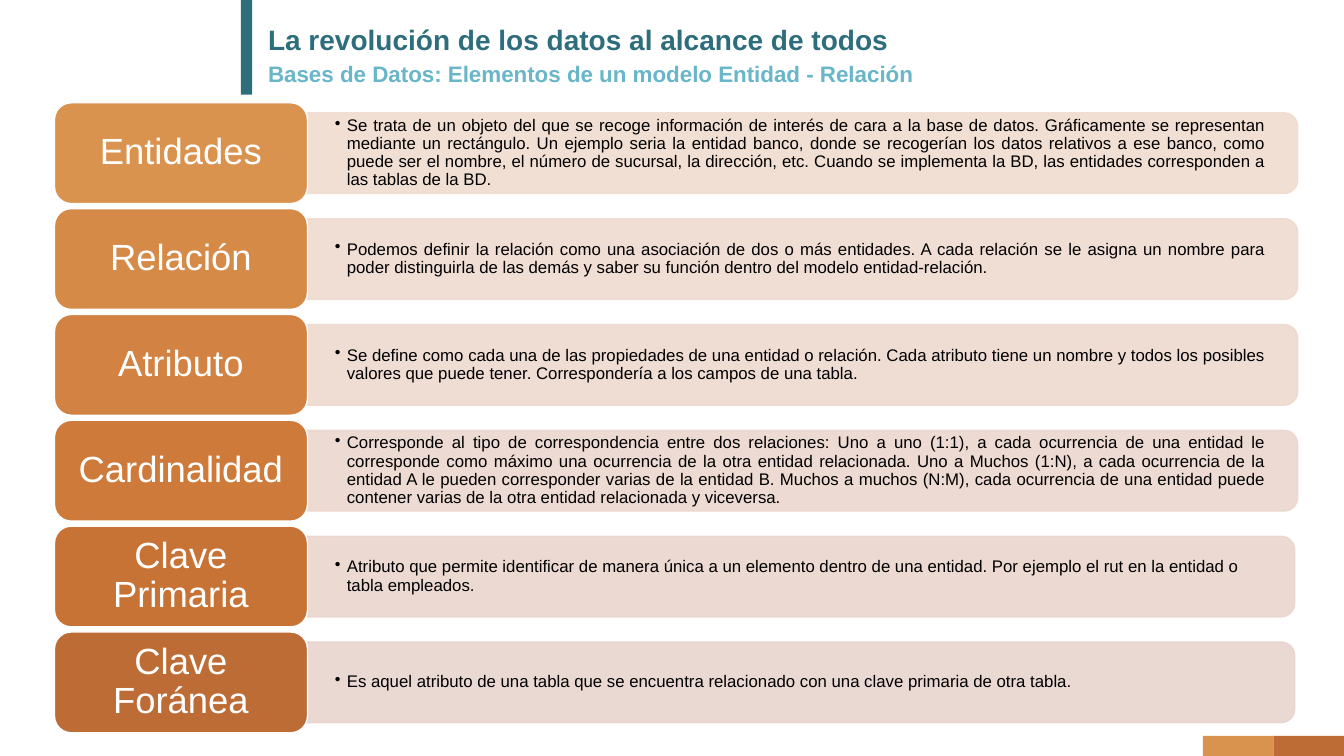
from lxml.etree import SubElement as Sub
from pptx import Presentation
from pptx.dml.color import RGBColor
from pptx.enum.shapes import MSO_SHAPE as Shape
from pptx.enum.text import MSO_ANCHOR as Anchor, PP_ALIGN as Align
from pptx.oxml.ns import qn
from pptx.util import Inches, Pt

WIDE, HIGH = 13.33, 7.5
TOP, STEP = 1.02, 1.05
LEFT, SPLIT = 0.54, 3.05

ROWS = [
    ("Entidades", "DA924F", "F1DCD0", 9.82, Align.JUSTIFY,
     "Se trata de un objeto del que se recoge información de interés de cara a la base de datos. "
     "Gráficamente se representan mediante un rectángulo. Un ejemplo seria la entidad banco, donde se "
     "recogerían los datos relativos a ese banco, como puede ser el nombre, el número de sucursal, la "
     "dirección, etc. Cuando se implementa la BD, las entidades corresponden a las tablas de la BD."),
    ("Relación", "D68A48", "EFDACF", 9.82, Align.JUSTIFY,
     "Podemos definir la relación como una asociación de dos o más entidades. A cada relación se le "
     "asigna un nombre para poder distinguirla de las demás y saber su función dentro del modelo "
     "entidad-relación."),
    ("Atributo", "D28242", "EED9CF", 9.82, Align.JUSTIFY,
     "Se define como cada una de las propiedades de una entidad o relación. Cada atributo tiene un "
     "nombre y todos los posibles valores que puede tener. Correspondería a los campos de una tabla."),
    ("Cardinalidad", "CD7A3B", "ECD7CE", 9.82, Align.JUSTIFY,
     "Corresponde al tipo de correspondencia entre dos relaciones: Uno a uno (1:1), a cada ocurrencia "
     "de una entidad le corresponde como máximo una ocurrencia de la otra entidad relacionada. Uno a "
     "Muchos (1:N), a cada ocurrencia de la entidad A le pueden corresponder varias de la entidad B. "
     "Muchos a muchos (N:M), cada ocurrencia de una entidad puede contener varias de la otra entidad "
     "relacionada y viceversa."),
    ("Clave Primaria", "C87336", "EAD6CE", 9.79, Align.LEFT,
     "Atributo que permite identificar de manera única a un elemento dentro de una entidad. Por "
     "ejemplo el rut en la entidad o tabla empleados."),
    ("Clave Foránea", "BD6C36", "E8D4CE", 9.79, Align.LEFT,
     "Es aquel atributo de una tabla que se encuentra relacionado con una clave primaria de otra tabla."),
]


def tint(target, code):
    target.rgb = RGBColor.from_string(code)


def block(slide, kind, box, fill, line=None):
    shape = slide.shapes.add_shape(kind, *map(Inches, box))
    shape.shadow.inherit = False
    shape.fill.solid()
    tint(shape.fill.fore_color, fill)
    if line:
        tint(shape.line.color, line)
        shape.line.width = Pt(1)
    else:
        shape.line.fill.background()
    return shape


def write(slide, box, text, size, color, align=Align.LEFT, anchor=Anchor.MIDDLE,
          pad=(0.1, 0.05), bold=False, bullet=False):
    frame = slide.shapes.add_textbox(*map(Inches, box)).text_frame
    frame.word_wrap = True
    frame.vertical_anchor = anchor
    frame.margin_left = frame.margin_right = Inches(pad[0])
    frame.margin_top = frame.margin_bottom = Inches(pad[1])
    para = frame.paragraphs[0]
    para.text = text
    para.alignment = align
    para.line_spacing = 0.9
    if bullet:
        props = para._p.get_or_add_pPr()
        props.set("marL", str(Inches(0.12)))
        props.set("indent", str(Inches(-0.12)))
        Sub(props, qn("a:buChar"), char="•")
    font = para.runs[0].font
    font.name, font.size, font.bold = "Arial", Pt(size), bold
    tint(font.color, color)


def header(slide, x, y, w):
    block(slide, Shape.RECTANGLE, (x, y, 0.11, 0.94), "2D6D7C")
    write(slide, (x + 0.17, y + 0.21, w, 0.4), "La revolución de los datos al alcance de todos",
          20, "2D6D7C", anchor=Anchor.TOP, bold=True)
    write(slide, (x + 0.17, y + 0.58, w, 0.4),
          "Bases de Datos: Elementos de un modelo Entidad - Relación",
          16, "69B6C9", anchor=Anchor.TOP, bold=True)


def corner(slide, w, h):
    for col, fill in enumerate(("BD6C36", "DA924F"), 1):
        block(slide, Shape.RECTANGLE, (WIDE - col * w, HIGH - h, w, h), fill)


def panel(slide, x, y, w, h, fill, text, align):
    # A tall shape turned a quarter, so its round corners face right
    turned = (x + (w - h) / 2, y + (h - w) / 2, h, w)
    shape = block(slide, Shape.ROUND_2_SAME_RECTANGLE, turned, fill, fill)
    shape.rotation = 90
    for tone in shape._element.spPr.iter(qn("a:srgbClr")):
        Sub(tone, qn("a:alpha"), val="90000")
    write(slide, (x, y + 0.04, w - 0.04, h - 0.08), text, 12, "000000", align,
          pad=(0.27, 0.14), bullet=True)


def label(slide, x, y, w, h, fill, text):
    block(slide, Shape.ROUNDED_RECTANGLE, (x, y, w, h), fill, "FFFFFF")
    write(slide, (x + 0.05, y + 0.05, w - 0.1, h - 0.1), text, 26, "FFFFFF",
          Align.CENTER, pad=(0.11, 0.05))


def main():
    deck = Presentation()
    deck.slide_width, deck.slide_height = Inches(WIDE), Inches(HIGH)
    slide = deck.slides.add_slide(deck.slide_layouts[6])
    header(slide, 2.39, 0, 10.45)
    corner(slide, 0.7, 0.2)
    # One row per model element
    for row, (name, dark, pale, wide, align, text) in enumerate(ROWS):
        y = TOP + row * STEP
        panel(slide, SPLIT, y + 0.1, wide, 0.8, pale, text, align)
        label(slide, LEFT, y, SPLIT - LEFT, 1, dark, name)
    deck.save("out.pptx")


if __name__ == "__main__":
    main()
